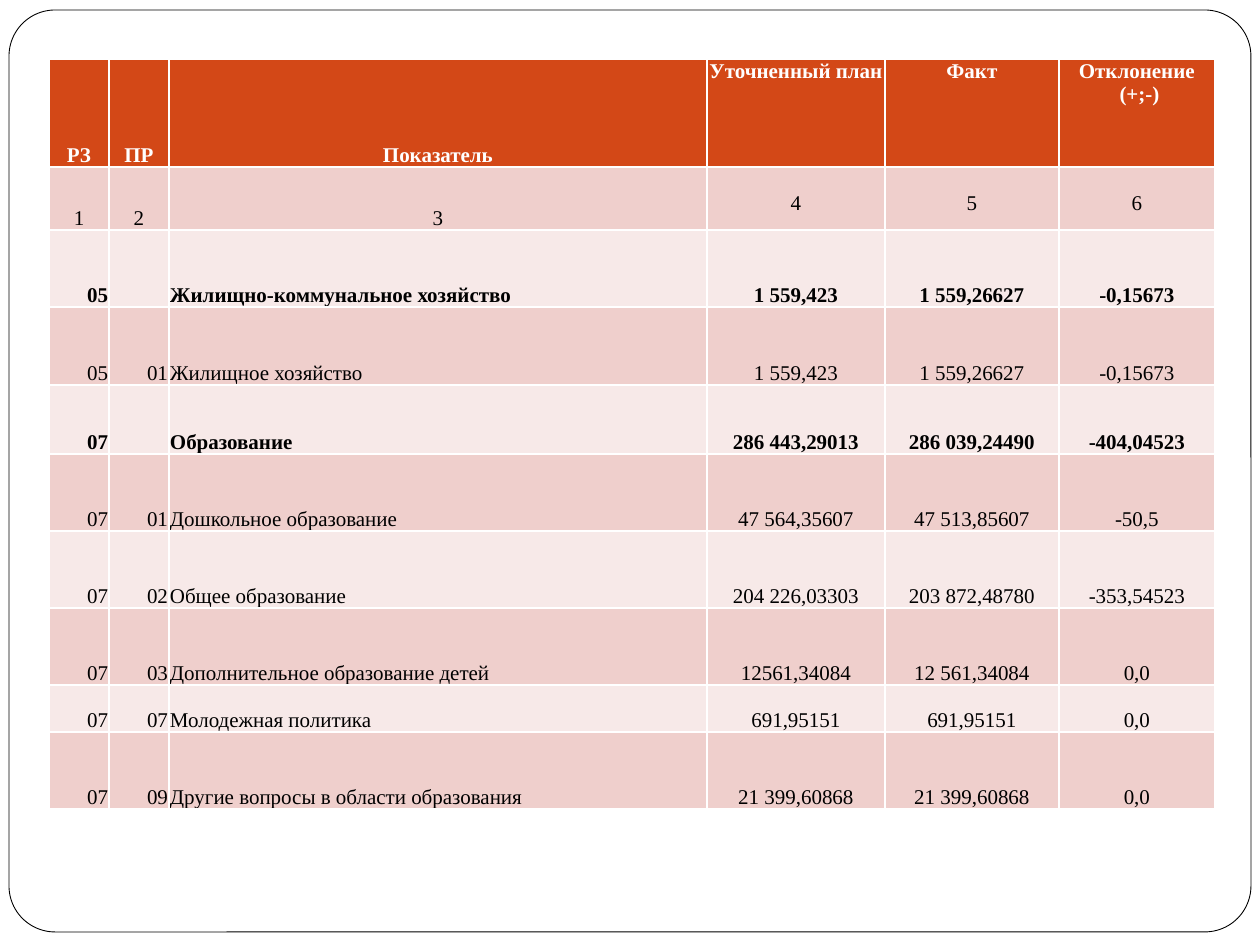
import dataclasses

import pptx
import pptx.dml.color
import pptx.enum.shapes
import pptx.enum.text
import pptx.util

ALIGN = pptx.enum.text.PP_ALIGN
ANCHOR = pptx.enum.text.MSO_ANCHOR
SCALE = 914400 / 126  # EMU in one px


@dataclasses.dataclass(frozen=True)
class Theme:
    font: str = "Times New Roman"
    size: int = 12
    white: str = "FFFFFF"
    black: str = "000000"
    head: str = "D34817"
    dark: str = "EFCFCC"
    light: str = "F7E9E8"


@dataclasses.dataclass(frozen=True)
class Column:
    width: int
    align: ALIGN


@dataclasses.dataclass(frozen=True)
class Row:
    height: int
    texts: tuple[str, ...]
    bold: bool = False


THEME = Theme()

# Table content
COLUMNS = (
    Column(60, ALIGN.RIGHT),
    Column(60, ALIGN.RIGHT),
    Column(538, ALIGN.LEFT),
    Column(178, ALIGN.CENTER),
    Column(174, ALIGN.CENTER),
    Column(156, ALIGN.CENTER),
)
ROWS = (
    Row(108, ("РЗ", "ПР", "Показатель", "Уточненный план", "Факт",
              "Отклонение\n (+;-)"), True),
    Row(63, ("1", "2", "3", "4", "5", "6")),
    Row(77, ("05", "", "Жилищно-коммунальное хозяйство",
             "1 559,423", "1 559,26627", "-0,15673"), True),
    Row(78, ("05", "01", "Жилищное хозяйство",
             "1 559,423", "1 559,26627", "-0,15673")),
    Row(69, ("07", "", "Образование",
             "286 443,29013", "286 039,24490", "-404,04523"), True),
    Row(77, ("07", "01", "Дошкольное образование",
             "47 564,35607", "47 513,85607", "-50,5")),
    Row(77, ("07", "02", "Общее образование",
             "204 226,03303", "203 872,48780", "-353,54523")),
    Row(77, ("07", "03", "Дополнительное образование детей",
             "12561,34084", "12 561,34084", "0,0")),
    Row(47, ("07", "07", "Молодежная политика",
             "691,95151", "691,95151", "0,0")),
    Row(77, ("07", "09", "Другие вопросы в области образования",
             "21 399,60868", "21 399,60868", "0,0")),
)


def emu(px: int) -> pptx.util.Emu:
    return pptx.util.Emu(round(px * SCALE))


def rgb(code: str) -> pptx.dml.color.RGBColor:
    return pptx.dml.color.RGBColor.from_string(code)


def draw_frame(slide) -> None:
    frame = slide.shapes.add_shape(
        pptx.enum.shapes.MSO_SHAPE.ROUNDED_RECTANGLE,
        emu(9), emu(10), emu(1242), emu(922))
    frame.adjustments[0] = 0.05
    frame.shadow.inherit = False
    frame.fill.solid()
    frame.fill.fore_color.rgb = rgb(THEME.white)
    frame.line.color.rgb = rgb(THEME.black)
    frame.line.width = pptx.util.Pt(0.5)


def fill_cell(cell, row: Row, r: int, c: int) -> None:
    # Background, insets and anchor
    cell.fill.solid()
    shade = THEME.head if r == 0 else THEME.dark if r % 2 else THEME.light
    cell.fill.fore_color.rgb = rgb(shade)
    top = r < 2 and c > 2
    cell.vertical_anchor = ANCHOR.TOP if top else ANCHOR.BOTTOM
    cell.margin_left = cell.margin_right = emu(1)
    # Column numbers 4 to 6 hang one line below the top edge
    cell.margin_top = emu(25 if top and r == 1 else 1)
    cell.margin_bottom = 0

    # Text
    frame = cell.text_frame
    for i, text in enumerate(row.texts[c].split("\n")):
        para = frame.add_paragraph() if i else frame.paragraphs[0]
        para.alignment = ALIGN.CENTER if r < 2 else COLUMNS[c].align
        para.font.size = pptx.util.Pt(THEME.size)
        if not text:
            continue
        run = para.add_run()
        run.text = text
        run.font.name = THEME.font
        run.font.size = pptx.util.Pt(THEME.size)
        run.font.bold = row.bold
        run.font.color.rgb = rgb(THEME.black if r else THEME.white)


def draw_table(slide) -> None:
    width = sum(col.width for col in COLUMNS)
    height = sum(row.height for row in ROWS)
    table = slide.shapes.add_table(
        len(ROWS), len(COLUMNS),
        emu(49), emu(59), emu(width), emu(height)).table
    for c, col in enumerate(COLUMNS):
        table.columns[c].width = emu(col.width)
    for r, row in enumerate(ROWS):
        table.rows[r].height = emu(row.height)
        for c in range(len(COLUMNS)):
            fill_cell(table.cell(r, c), row, r, c)


def main() -> None:
    deck = pptx.Presentation()
    deck.slide_width, deck.slide_height = emu(1260), emu(945)
    slide = deck.slides.add_slide(deck.slide_layouts[6])
    draw_frame(slide)
    draw_table(slide)
    deck.save("out.pptx")


if __name__ == "__main__":
    main()
